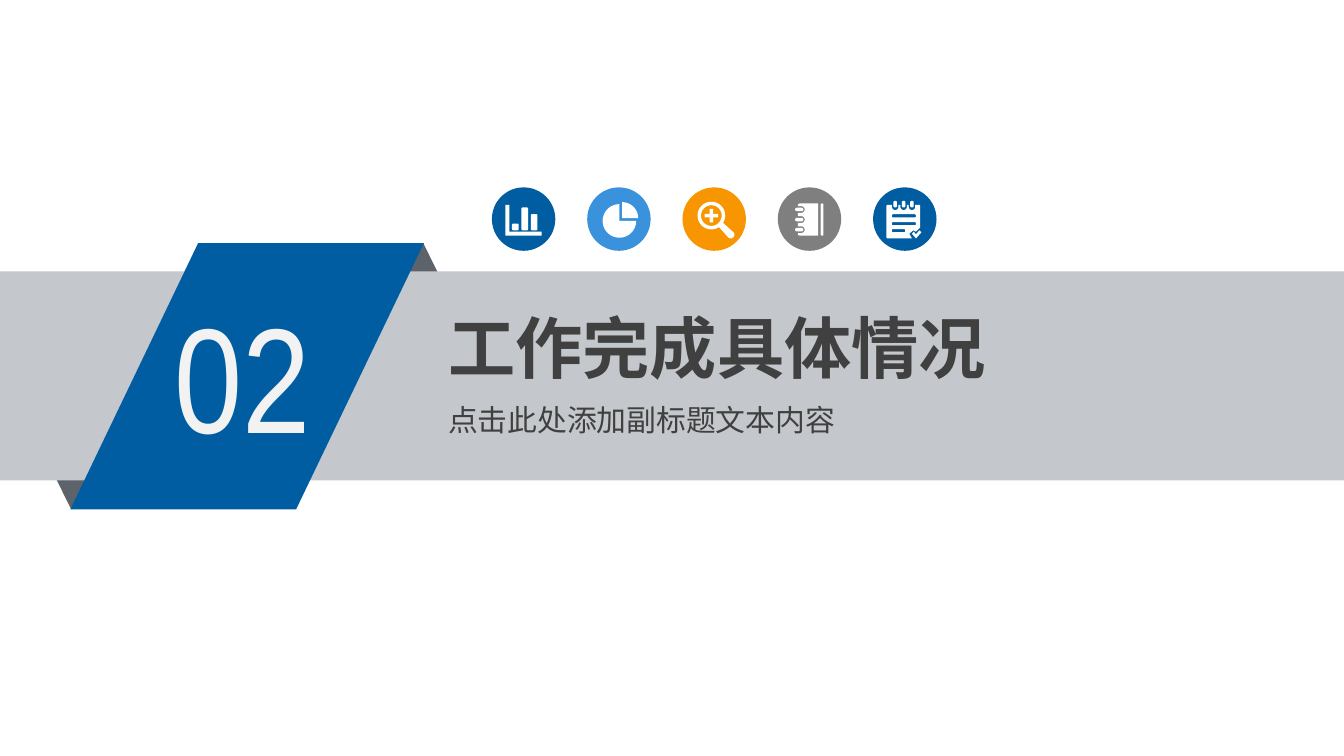
import math

import lxml.etree
import pptx
import pptx.dml.color
import pptx.enum.shapes
import pptx.enum.text
import pptx.oxml.ns
import pptx.util

COLUMNS, ROWS = 1000, 562.5
SHAPES = pptx.enum.shapes.MSO_SHAPE
BLUE, SKY, ORANGE, GREY = "005DA2", "3992DB", "F79600", "7F7F7F"
BAND, FOLD, WHITE, INK, PALE = "C4C7CB", "5D636A", "FFFFFF", "404040", "F2F2F2"
SANS = "Noto Sans CJK SC"
BADGE_LEFT, BADGE_TOP, BADGE_SIZE, BADGE_STEP = 366, 139.4, 47.2, 70.9


def cells(count):
    """Convert grid cells, a hundredth of an inch each, to a length."""
    return pptx.util.Inches(count / 100)


def color(hex_code):
    """Turn a hex string into a colour."""
    return pptx.dml.color.RGBColor.from_string(hex_code)


def paint(shape, hex_code):
    """Give a shape a flat fill with no line or shadow."""
    shape.fill.solid()
    shape.fill.fore_color.rgb = color(hex_code)
    shape.line.fill.background()
    shape.shadow.inherit = False


def add_block(slide, preset, box, hex_code):
    """Add a flat preset shape at a box given in cells."""
    shape = slide.shapes.add_shape(preset, *map(cells, box))
    paint(shape, hex_code)
    return shape


def write(holder, box, inset, text, size, font, hex_code, bold=False):
    """Place a text holder and fill it with one formatted run."""
    holder.left, holder.top, holder.width, holder.height = map(cells, box)
    frame = holder.text_frame
    frame.word_wrap = True
    frame.auto_size = pptx.enum.text.MSO_AUTO_SIZE.NONE
    frame.vertical_anchor = pptx.enum.text.MSO_ANCHOR.TOP
    frame.margin_left = frame.margin_right = cells(inset)
    frame.margin_top = frame.margin_bottom = cells(4)
    paragraph = frame.paragraphs[0]
    paragraph.alignment = pptx.enum.text.PP_ALIGN.LEFT
    run = paragraph.add_run()
    run.text = text
    run.font.size = pptx.util.Pt(size)
    run.font.bold = bold
    run.font.name = font
    run.font.color.rgb = color(hex_code)
    east_asian = lxml.etree.SubElement(run._r.get_or_add_rPr(), pptx.oxml.ns.qn("a:ea"))
    east_asian.set("typeface", font)


def arc(x, y, radius, start=0, end=360):
    """List points along an arc, with angles in degrees."""
    steps = max(4, round(abs(end - start) / 10))
    angles = [math.radians(start + (end - start) * i / steps) for i in range(steps + 1)]
    return [(x + radius * math.cos(a), y + radius * math.sin(a)) for a in angles]


def pill(left, top, width, height, radius=1):
    """List the points of a rounded rectangle."""
    right, bottom = left + width - radius, top + height - radius
    corners = [(right, bottom), (left + radius, bottom),
               (left + radius, top + radius), (right, top + radius)]
    return [point for i, (x, y) in enumerate(corners)
            for point in arc(x, y, radius, 90 * i, 90 * i + 90)]


def bar_chart():
    """Outline a bar chart."""
    axes = [(10, 13), (13, 13), (13, 33), (37, 33), (37, 36), (10, 36)]
    bars = [(15, 5), (22, 17), (29, 12)]
    return [axes] + [pill(x, 32 - height, 5, height) for x, height in bars]


def pie_chart():
    """Outline a pie with one quarter pulled out."""
    return [[(26, 23)] + arc(26, 23, 12, -90, 0),
            [(24, 25)] + arc(24, 25, 12.5, 0, 270)]


def magnifier():
    """Outline a magnifying glass with a plus sign."""
    x, y, arm, half = 21.5, 21, 5, 1.3
    rim = arc(x, y, 10.3, 56, 392) + arc(36, 35.3, 2.7, -45, 135)
    quarter = [(half, -arm), (half, -half), (arm, -half)]
    plus = []
    for _ in range(4):
        plus += [(x + dx, y + dy) for dx, dy in quarter]
        quarter = [(-dy, dx) for dx, dy in quarter]
    return [rim, arc(x, y, 7.7), plus]


def notebook():
    """Outline a ring-bound notebook."""
    rings = (16.5, 24, 31.5)
    cover = [(30, 12), (30, 36)] + arc(16.5, 34.5, 1.5, 90, 180)
    for y in reversed(rings):
        cover += [(15, y + 2.5)] + arc(17.5, y, 2.5, 90, -90) + [(15, y - 2.5)]
    cover += arc(16.5, 13.5, 1.5, 180, 270)
    return [cover, pill(32, 12, 2, 24, 0.9)] + [pill(13, y - 1.3, 6, 2.6, 1.2) for y in rings]


def checklist():
    """Outline a clipped note sheet with a check mark."""
    clips = (16.5, 22.8, 29)
    sheet = arc(11, 14, 1, 180, 270)
    for x in clips:
        sheet += [(x - 2.4, 13)] + arc(x, 14.5, 2.4, 180, 0) + [(x + 2.4, 13)]
    sheet += [(35, 13), (35, 30), (32, 33), (30, 32), (27, 34.5), (29, 38)]
    sheet += arc(11, 37, 1, 90, 180)
    check = [(29, 34.5), (30.3, 33), (32, 35), (34.5, 32), (36, 33.5), (32, 38)]
    lines = [pill(14, y, width, 2.4) for y, width in ((20, 18), (25.8, 18), (31, 10))]
    return [sheet, check] + lines + [pill(x - 1.3, 10, 2.6, 5, 1.2) for x in clips]


def add_badge(slide, position, hex_code, outlines):
    """Add a round badge with a white icon."""
    left = BADGE_LEFT + position * BADGE_STEP
    add_block(slide, SHAPES.OVAL, (left, BADGE_TOP, BADGE_SIZE, BADGE_SIZE), hex_code)
    contours = [[(cells(left + x), cells(BADGE_TOP + y)) for x, y in outline]
                for outline in outlines]
    builder = slide.shapes.build_freeform(*contours[0][0])
    builder.add_line_segments(contours[0][1:])
    for contour in contours[1:]:
        builder.move_to(*contour[0])
        builder.add_line_segments(contour[1:])
    paint(builder.convert_to_shape(), WHITE)


def add_ribbon(slide):
    """Add the grey band and the folded section ribbon."""
    add_block(slide, SHAPES.ISOSCELES_TRIANGLE, (270, 181, 90, 91), FOLD)
    lower_fold = add_block(slide, SHAPES.ISOSCELES_TRIANGLE, (8, 288, 90, 91), FOLD)
    lower_fold.rotation = 180
    add_block(slide, SHAPES.RECTANGLE, (0, 202, COLUMNS, 155.4), BAND)
    ribbon = add_block(slide, SHAPES.PARALLELOGRAM, (52.4, 181, 263, 198), BLUE)
    ribbon.adjustments[0] = 0.48


def add_text(slide, box, *style):
    """Add a text box with one run."""
    write(slide.shapes.add_textbox(0, 0, 0, 0), box, *style)


def main():
    """Build the section slide and save it."""
    deck = pptx.Presentation()
    deck.slide_width, deck.slide_height = cells(COLUMNS), cells(ROWS)
    slide = deck.slides.add_slide(deck.slide_layouts[5])
    add_ribbon(slide)
    add_text(slide, (122.5, 207.5, 145, 142), 7, "02", 80, "Arial Narrow", PALE)
    title = slide.shapes.title
    write(title, (325.5, 224, 552, 68), 8, "工作完成具体情况", 36, SANS, INK, True)
    slide.shapes._spTree.append(title._element)
    add_text(slide, (325.5, 295, 336, 35), 8, "点击此处添加副标题文本内容", 16, SANS, INK)
    badges = [(BLUE, bar_chart), (SKY, pie_chart), (ORANGE, magnifier),
              (GREY, notebook), (BLUE, checklist)]
    for position, (hex_code, icon) in enumerate(badges):
        add_badge(slide, position, hex_code, icon())
    deck.save("out.pptx")


if __name__ == "__main__":
    main()
